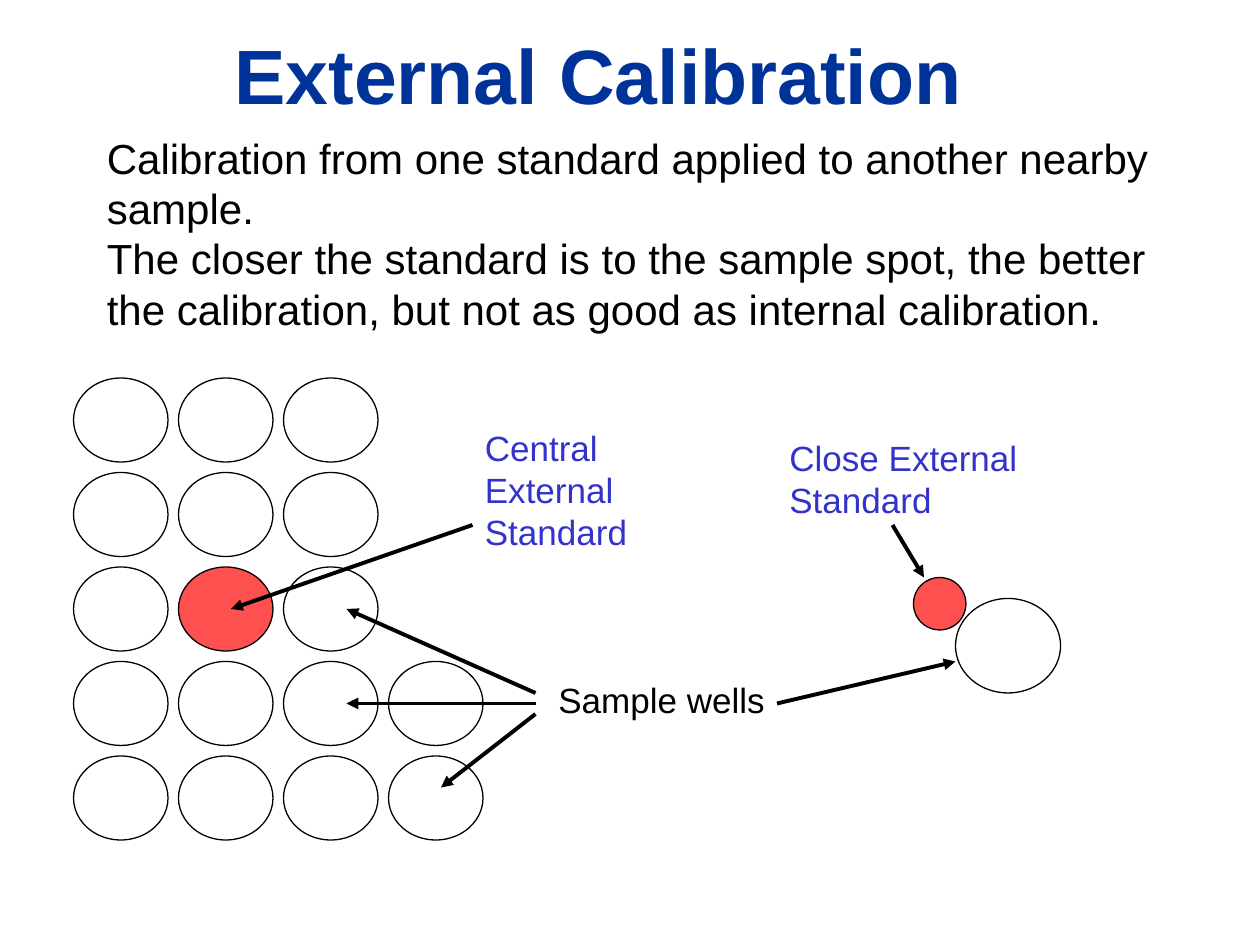
from dataclasses import dataclass
from pptx import Presentation
from pptx.dml.color import RGBColor
from pptx.enum.shapes import MSO_CONNECTOR, MSO_SHAPE
from pptx.enum.text import MSO_ANCHOR, PP_ALIGN
from pptx.oxml.ns import qn
from pptx.util import Inches, Pt
from lxml.etree import SubElement


@dataclass(frozen=True)
class Theme:
    face: str = "Arial"
    head: RGBColor = RGBColor(0x00, 0x33, 0x99)
    note: RGBColor = RGBColor(0x33, 0x33, 0xCC)
    ink: RGBColor = RGBColor(0x00, 0x00, 0x00)
    spot: RGBColor = RGBColor(0xFF, 0x50, 0x50)
    title: int = 44
    body: int = 24
    label: int = 20
    thin: float = 0.75
    bold: float = 2.25


THEME = Theme()
WIDTH, HEIGHT = Inches(10), Inches(7.5)
CELL = WIDTH / 120


def grid(*cells):
    return [round(cell * CELL) for cell in cells]


def style(para, size, color, bold=False):
    font = para.font
    font.name, font.size, font.bold = THEME.face, Pt(size), bold
    font.color.rgb = color


def add_title(slide, text, *box):
    title = slide.shapes.title
    title.left, title.top, title.width, title.height = grid(*box)
    frame = title.text_frame
    frame.text = text
    frame.word_wrap = True
    frame.vertical_anchor = MSO_ANCHOR.MIDDLE
    para = frame.paragraphs[0]
    para.alignment = PP_ALIGN.CENTER
    style(para, THEME.title, THEME.head, True)


def add_text(slide, text, box, size=THEME.label, color=THEME.ink):
    frame = slide.shapes.add_textbox(*grid(*box)).text_frame
    frame.word_wrap = True
    frame.text = text
    for para in frame.paragraphs:
        style(para, size, color)


def add_well(slide, box, fill=None):
    well = slide.shapes.add_shape(MSO_SHAPE.OVAL, *grid(*box))
    well.shadow.inherit = False
    if fill is None:
        well.fill.background()
    else:
        well.fill.solid()
        well.fill.fore_color.rgb = fill
    well.line.color.rgb = THEME.ink
    well.line.width = Pt(THEME.thin)


def add_plate(slide, left, top, rows, spot):
    for row, count in enumerate(rows):
        for col in range(count):
            fill = THEME.spot if (row, col) == spot else None
            add_well(slide, (left + 10 * col, top + 9 * row, 9, 8), fill)


def add_arrow(slide, start, end):
    arrow = slide.shapes.add_connector(
        MSO_CONNECTOR.STRAIGHT, *grid(*start, *end))
    arrow.line.color.rgb = THEME.ink
    arrow.line.width = Pt(THEME.bold)
    SubElement(arrow.line._get_or_add_ln(), qn("a:tailEnd"), type="triangle")
    SubElement(arrow._element.spPr, qn("a:effectLst"))


def main():
    deck = Presentation()
    deck.slide_width, deck.slide_height = WIDTH, HEIGHT
    slide = deck.slides.add_slide(deck.slide_layouts[5])

    add_title(slide, "External Calibration", 6, 2, 102, 10)
    add_text(slide,
             "Calibration from one standard applied to another nearby sample.\n"
             "The closer the standard is to the sample spot, the better the "
             "calibration, but not as good as internal calibration.",
             (9, 12, 102, 20.4), THEME.body)

    add_plate(slide, 7, 36, (3, 3, 3, 4, 4), (2, 1))
    add_well(slide, (91, 57, 10, 9))
    add_well(slide, (87, 55, 5, 5), THEME.spot)

    add_text(slide, "Central External Standard", (45, 40, 17, 13.2),
             color=THEME.note)
    add_text(slide, "Close External Standard", (74, 41, 34, 9.2),
             color=THEME.note)
    add_text(slide, "Sample wells", (52, 64, 23, 5.2))

    for start, end in (
        ((45, 50), (22, 58)),
        ((51, 66), (33, 58)),
        ((51, 67), (33, 67)),
        ((51, 68), (42, 75)),
        ((74, 67), (91, 63)),
        ((85, 50), (88, 55)),
    ):
        add_arrow(slide, start, end)

    deck.save("out.pptx")


if __name__ == "__main__":
    main()
